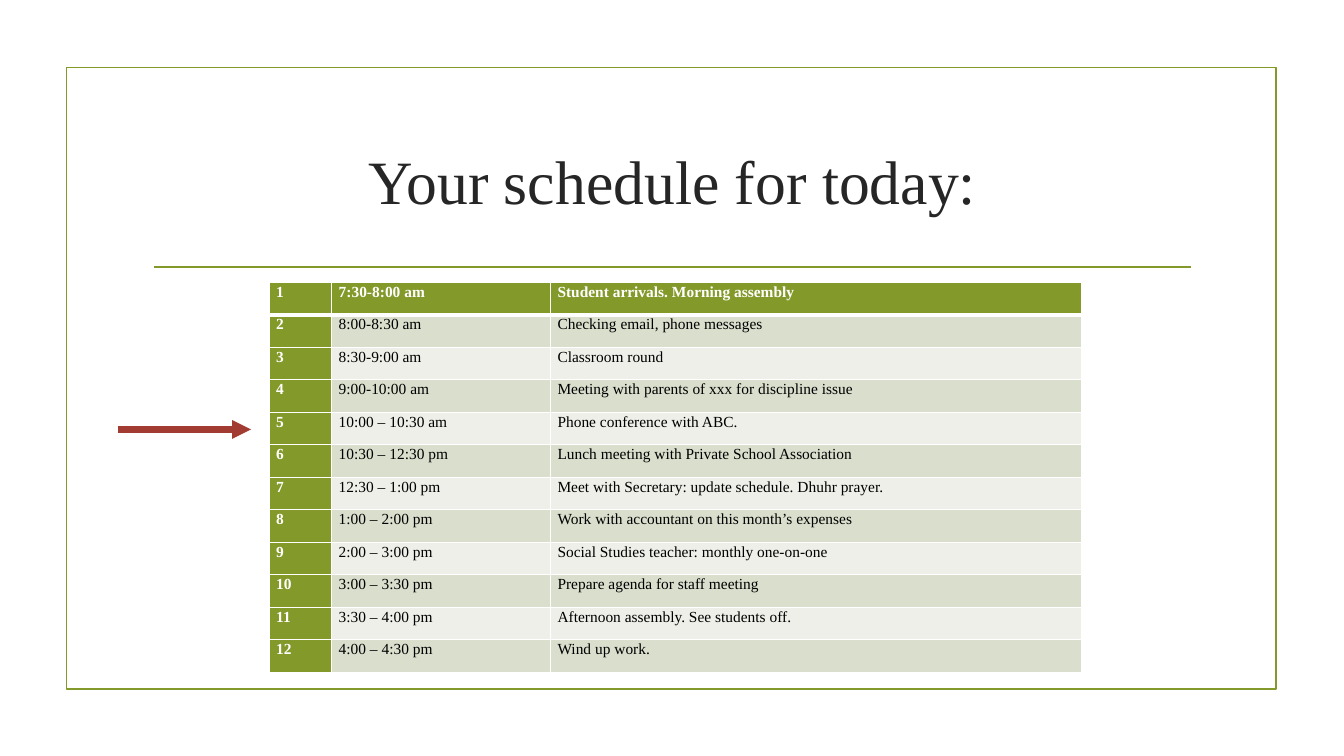
from lxml.etree import SubElement
from pptx import Presentation
from pptx.dml.color import RGBColor
from pptx.enum.shapes import MSO_CONNECTOR as Connector, MSO_SHAPE as Shape
from pptx.enum.text import MSO_ANCHOR as Anchor, PP_ALIGN as Align
from pptx.oxml.ns import qn
from pptx.util import Inches, Pt

WIDTH, HEIGHT = Inches(13.33), Inches(7.5)
FONT = "Times New Roman"
GREEN, WHITE, BLACK, RED = "83992A", "FFFFFF", "000000", "A23C33"
BANDS = ("EDEFE8", "D9DECD")
COLUMN_SHARES = (4.65, 16.28, 39.53)
ROW_SHARE = 4.3
SCHEDULE = (
    ("7:30-8:00 am", "Student arrivals. Morning assembly"),
    ("8:00-8:30 am", "Checking email, phone messages"),
    ("8:30-9:00 am", "Classroom round"),
    ("9:00-10:00 am", "Meeting with parents of xxx for discipline issue"),
    ("10:00 – 10:30 am", "Phone conference with ABC."),
    ("10:30 – 12:30 pm", "Lunch meeting with Private School Association"),
    ("12:30 – 1:00 pm", "Meet with Secretary: update schedule. Dhuhr prayer."),
    ("1:00 – 2:00 pm", "Work with accountant on this month’s expenses"),
    ("2:00 – 3:00 pm", "Social Studies teacher: monthly one-on-one"),
    ("3:00 – 3:30 pm", "Prepare agenda for staff meeting"),
    ("3:30 – 4:00 pm", "Afternoon assembly. See students off."),
    ("4:00 – 4:30 pm", "Wind up work."),
)


def across(percent):
    return round(WIDTH * percent / 100)


def down(percent):
    return round(HEIGHT * percent / 100)


def box(left, top, width, height):
    return across(left), down(top), across(width), down(height)


def color(value):
    return RGBColor.from_string(value)


def add_run(paragraph, text, size, text_color, bold=False):
    run = paragraph.add_run()
    run.text = text
    run.font.name = FONT
    run.font.size = Pt(size)
    run.font.bold = bold
    run.font.color.rgb = color(text_color)


def add_frame(slide):
    frame = slide.shapes.add_shape(Shape.RECTANGLE, *box(4.95, 8.93, 90, 82.27))
    frame.shadow.inherit = False
    frame.fill.background()
    frame.line.color.rgb = color(GREEN)
    frame.line.width = Pt(1.25)


def add_line(slide, start, end, level, line_color, width, arrow=False):
    line = slide.shapes.add_connector(
        Connector.STRAIGHT, across(start), down(level), across(end), down(level))
    line.line.color.rgb = color(line_color)
    line.line.width = Pt(width)
    if arrow:
        SubElement(line.line._get_or_add_ln(), qn("a:tailEnd"), type="triangle")
    SubElement(line._element.spPr, qn("a:effectLst"))


def add_title(slide, text):
    text_frame = slide.shapes.add_textbox(*box(10.65, 14.27, 78.77, 19.07)).text_frame
    text_frame.word_wrap = True
    text_frame.vertical_anchor = Anchor.MIDDLE
    paragraph = text_frame.paragraphs[0]
    paragraph.alignment = Align.CENTER
    add_run(paragraph, text, 44, "262626")


def add_borders(cell, **widths):
    properties = cell._tc.get_or_add_tcPr()
    for side in "LRTB":
        border = SubElement(properties, qn(f"a:ln{side}"), w=str(Pt(widths.get(side, 1))))
        fill = SubElement(border, qn("a:solidFill"))
        SubElement(fill, qn("a:srgbClr"), val=WHITE)


def fill_cell(cell, text, row, column):
    heading = row == 0 or column == 0
    add_borders(cell, T=3 if row == 1 else 1, B=3 if row == 0 else 1)
    cell.fill.solid()
    cell.fill.fore_color.rgb = color(GREEN if heading else BANDS[row % 2])
    cell.margin_left = cell.margin_right = Inches(0.07)
    cell.margin_top = cell.margin_bottom = 0
    paragraph = cell.text_frame.paragraphs[0]
    paragraph.line_spacing = 1.07
    add_run(paragraph, text, 11, WHITE if heading else BLACK, heading)


def add_schedule(slide):
    table = slide.shapes.add_table(
        len(SCHEDULE), len(COLUMN_SHARES),
        *box(20.03, 37.33, sum(COLUMN_SHARES), ROW_SHARE * len(SCHEDULE))).table
    for column, share in zip(table.columns, COLUMN_SHARES):
        column.width = across(share)
    for row, entry in enumerate(SCHEDULE):
        table.rows[row].height = down(ROW_SHARE)
        for column, text in enumerate((str(row + 1), *entry)):
            fill_cell(table.cell(row, column), text, row, column)


def main():
    presentation = Presentation()
    presentation.slide_width, presentation.slide_height = WIDTH, HEIGHT
    slide = presentation.slides.add_slide(presentation.slide_layouts[6])
    add_frame(slide)
    add_line(slide, 11.48, 88.6, 35.33, GREEN, 1.25)
    add_title(slide, "Your schedule for today:")
    add_schedule(slide)
    add_line(slide, 8.78, 18.68, 56.8, RED, 4.5, arrow=True)
    presentation.save("out.pptx")


if __name__ == "__main__":
    main()
